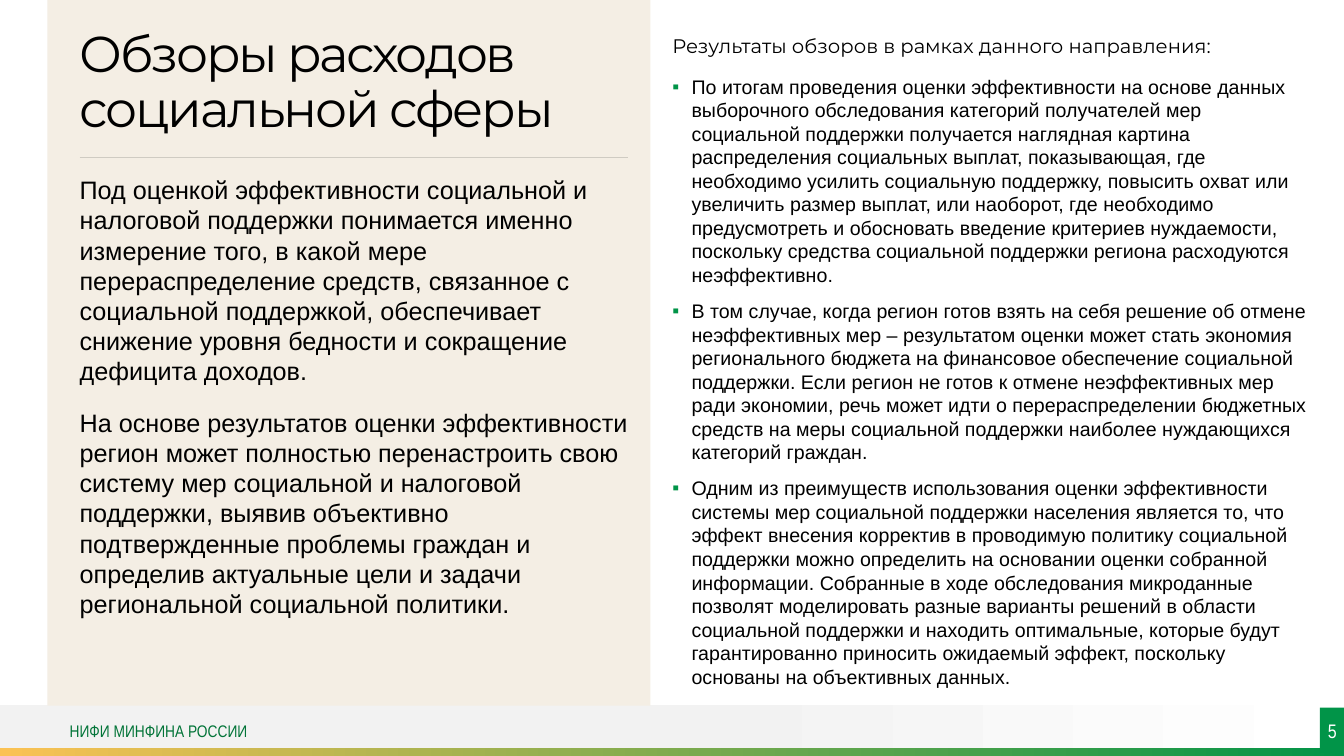
from lxml.etree import SubElement
from pptx import Presentation
from pptx.dml.color import RGBColor
from pptx.enum.shapes import MSO_CONNECTOR, MSO_SHAPE
from pptx.enum.text import MSO_ANCHOR, MSO_AUTO_SIZE, PP_ALIGN
from pptx.oxml.ns import qn
from pptx.util import Inches, Pt

COLORS = {
    "text": "000000", "white": "FFFFFF", "green": "019448", "footer": "027438",
    "panel": "F4EEE4", "grey": "F2F2F2", "amber": "FBC254", "rule": "CFCBC2",
}
TITLE = "Обзоры расходов социальной сферы"
EXPLANATION = [
    "Под оценкой эффективности социальной и налоговой поддержки понимается именно измерение того, в какой мере перераспределение средств, связанное с социальной поддержкой, обеспечивает снижение уровня бедности и сокращение дефицита доходов.",
    "На основе результатов оценки эффективности регион может полностью перенастроить свою систему мер социальной и налоговой поддержки, выявив объективно подтвержденные проблемы граждан и определив актуальные цели и задачи региональной социальной политики.",
]
RESULTS_HEADING = "Результаты обзоров в рамках данного направления:"
RESULTS = [
    "По итогам проведения оценки эффективности на основе данных выборочного обследования категорий получателей мер социальной поддержки получается наглядная картина распределения социальных выплат, показывающая, где необходимо усилить социальную поддержку, повысить охват или увеличить размер выплат, или наоборот, где необходимо предусмотреть и обосновать введение критериев нуждаемости, поскольку средства социальной поддержки региона расходуются неэффективно.",
    "В том случае, когда регион готов взять на себя решение об отмене неэффективных мер – результатом оценки может стать экономия регионального бюджета на финансовое обеспечение социальной поддержки. Если регион не готов к отмене неэффективных мер ради экономии, речь может идти о перераспределении бюджетных средств на меры социальной поддержки наиболее нуждающихся категорий граждан.",
    "Одним из преимуществ использования оценки эффективности системы мер социальной поддержки населения является то, что эффект внесения корректив в проводимую политику социальной поддержки можно определить на основании оценки собранной информации. Собранные в ходе обследования микроданные позволят моделировать разные варианты решений в области социальной поддержки и находить оптимальные, которые будут гарантированно приносить ожидаемый эффект, поскольку основаны на объективных данных.",
]
RESULT_FORMAT = {"space_before": Pt(6), "space_after": Pt(3)}


def rgb(name):
    return RGBColor.from_string(COLORS[name])


def set_attributes(target, values):
    for name, value in values.items():
        setattr(target, name, value)


def add_block(slide, box, color):
    shape = slide.shapes.add_shape(MSO_SHAPE.RECTANGLE, *map(Inches, box))
    shape.shadow.inherit = False
    shape.line.fill.background()
    shape.fill.solid()
    shape.fill.fore_color.rgb = rgb(color)
    return shape


def add_gradient_band(slide, box, stops):
    fill = add_block(slide, box, stops[0][1]).fill
    fill.gradient()
    fill.gradient_angle = 0
    for stop, (position, color) in zip(fill.gradient_stops, stops):
        stop.position = position
        stop.color.rgb = rgb(color)


def prepare_frame(frame, anchor=MSO_ANCHOR.TOP, inset=0.0, side_inset=0.0):
    set_attributes(frame, {
        "word_wrap": True, "auto_size": MSO_AUTO_SIZE.NONE, "vertical_anchor": anchor,
        "margin_left": Inches(side_inset), "margin_right": Inches(side_inset),
        "margin_top": Inches(inset), "margin_bottom": Inches(inset),
    })


def add_text_box(slide, box, **frame_values):
    frame = slide.shapes.add_textbox(*map(Inches, box)).text_frame
    prepare_frame(frame, **frame_values)
    return frame


def add_bullet(paragraph):
    properties = paragraph._p.get_or_add_pPr()
    properties.set("marL", str(Inches(0.19)))
    properties.set("indent", str(Inches(-0.19)))
    bullet_color = SubElement(properties, qn("a:buClr"))
    SubElement(bullet_color, qn("a:srgbClr"), val=COLORS["green"])
    SubElement(properties, qn("a:buFont"), typeface="Arial")
    SubElement(properties, qn("a:buChar"), char="▪")


def write(paragraph, text, font, size, color="text", bullet=False, **paragraph_format):
    if bullet:
        add_bullet(paragraph)
    set_attributes(paragraph, paragraph_format)
    run = paragraph.add_run()
    run.text = text
    set_attributes(run.font, {"name": font, "size": Pt(size)})
    run.font.color.rgb = rgb(color)
    return run


def add_title(slide):
    title = slide.shapes.title
    set_attributes(title, {
        "left": Inches(0.79), "top": Inches(0.14),
        "width": Inches(5.44), "height": Inches(1.23),
    })
    prepare_frame(title.text_frame, anchor=MSO_ANCHOR.BOTTOM)
    run = write(title.text_frame.paragraphs[0], TITLE, "Montserrat", 36,
                alignment=PP_ALIGN.LEFT, line_spacing=0.9)
    run.font._element.set("spc", "-150")
    slide.shapes._spTree.append(title._element)


def add_rule(slide):
    ends = map(Inches, (0.79, 1.56, 6.23, 1.56))
    rule = slide.shapes.add_connector(MSO_CONNECTOR.STRAIGHT, *ends)
    rule.line.color.rgb = rgb("rule")
    rule.line.width = Pt(0.5)
    SubElement(rule._element.spPr, qn("a:effectLst"))


def add_explanation(slide):
    frame = add_text_box(slide, (0.79, 1.73, 5.44, 4.94))
    for index, text in enumerate(EXPLANATION):
        paragraph = frame.add_paragraph() if index else frame.paragraphs[0]
        write(paragraph, text, "Arial", 18,
              space_before=Pt(10 if index else 0), space_after=Pt(5))


def add_results(slide):
    frame = add_text_box(slide, (6.57, 0.29, 6.52, 6.7), inset=0.05, side_inset=0.1)
    write(frame.paragraphs[0], RESULTS_HEADING, "Montserrat", 14, space_after=Pt(6))
    for text in RESULTS:
        write(frame.add_paragraph(), text, "Arial", 14, bullet=True, **RESULT_FORMAT)


def add_footer(slide):
    frame = add_text_box(slide, (0.69, 7.02, 4.61, 0.45), anchor=MSO_ANCHOR.MIDDLE)
    write(frame.paragraphs[0], "НИФИ МИНФИНА РОССИИ", "Arial Narrow", 12, "footer")


def add_page_number(slide):
    frame = add_block(slide, (13.09, 7.02, 0.25, 0.45), "green").text_frame
    prepare_frame(frame, anchor=MSO_ANCHOR.MIDDLE)
    write(frame.paragraphs[0], "5", "Arial Narrow", 14, "white", alignment=PP_ALIGN.CENTER)


def main():
    presentation = Presentation()
    presentation.slide_width = Inches(13.33)
    presentation.slide_height = Inches(7.5)
    slide = presentation.slides.add_slide(presentation.slide_layouts[5])
    add_gradient_band(slide, (0, 6.99, 13.33, 0.46), [(0.53, "grey"), (1, "white")])
    add_gradient_band(slide, (0, 7.42, 13.35, 0.08), [(0, "amber"), (1, "green")])
    add_block(slide, (0.47, 0, 5.98, 7), "panel")
    add_footer(slide)
    add_explanation(slide)
    add_page_number(slide)
    add_title(slide)
    add_rule(slide)
    add_results(slide)
    presentation.save("out.pptx")


if __name__ == "__main__":
    main()
